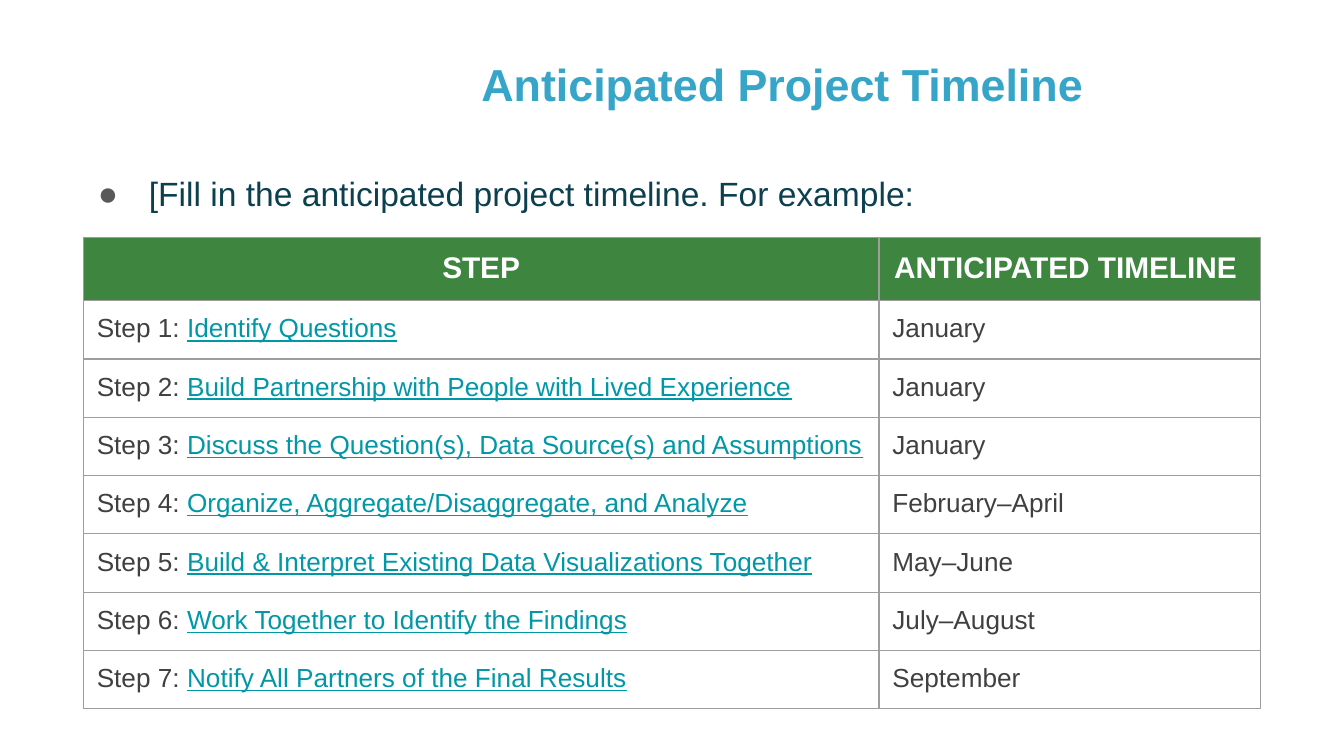
from pptx import Presentation
from pptx.dml.color import RGBColor as RGB
from pptx.enum.text import MSO_ANCHOR as Anchor, PP_ALIGN as Align
from pptx.oxml import parse_xml
from pptx.util import Inches, Pt

NS = 'xmlns:a="http://schemas.openxmlformats.org/drawingml/2006/main"'
COLORS = {"title": "36A5C8", "body": "0C404F", "bullet": "595959",
          "head": "3E863F", "white": "FFFFFF", "text": "404040",
          "link": "0097A7", "border": "9E9E9E"}
STEPS = [
    ("Identify Questions", "January"),
    ("Build Partnership with People with Lived Experience", "January"),
    ("Discuss the Question(s), Data Source(s) and Assumptions", "January"),
    ("Organize, Aggregate/Disaggregate, and Analyze", "February–April"),
    ("Build & Interpret Existing Data Visualizations Together", "May–June"),
    ("Work Together to Identify the Findings", "July–August"),
    ("Notify All Partners of the Final Results", "September"),
]


def style(par, size, color, bold=False):
    # Runs carry the font too, so that row heights follow Arial
    for font in [par.font] + [run.font for run in par.runs]:
        font.name, font.size, font.bold = "Arial", Pt(size), bold
        font.color.rgb = RGB.from_string(COLORS[color])


def inset(item):
    item.margin_left = item.margin_right = Inches(0.1)
    item.margin_top = item.margin_bottom = Inches(0.1)
    item.vertical_anchor = Anchor.TOP


# A 16:9 page
prs = Presentation()
prs.slide_width = Inches(10)
prs.slide_height = prs.slide_width * 9 // 16
slide = prs.slides.add_slide(prs.slide_layouts[5])

# Title
title = slide.shapes.title
title.left, title.top = Inches(2.16), Inches(0.32)
title.width, title.height = Inches(7.32), Inches(0.56)
frame = title.text_frame
inset(frame)
frame.text = "Anticipated Project Timeline"
frame.paragraphs[0].alignment = Align.CENTER
style(frame.paragraphs[0], 24, "title", True)

# Bullet line
box = slide.shapes.add_textbox(Inches(0.51), Inches(1.16), Inches(8.97), Inches(4.04))
frame = box.text_frame
frame.word_wrap = True
inset(frame)
par = frame.paragraphs[0]
par.text = "[Fill in the anticipated project timeline. For example:"
par.line_spacing, par.space_after = 1.1, Pt(6)
style(par, 18, "body")
props = par._p.get_or_add_pPr()
props.set("marL", str(Inches(0.5)))
props.set("indent", str(Inches(-0.38)))
mark = props.find("{*}defRPr")
for xml in (f'<a:buClr {NS}><a:srgbClr val="{COLORS["bullet"]}"/></a:buClr>',
            f'<a:buFont {NS} typeface="Arial"/>',
            f'<a:buChar {NS} char="●"/>'):
    mark.addprevious(parse_xml(xml))

# Table text
rows = len(STEPS) + 1
table = slide.shapes.add_table(rows, 2, Inches(0.62), Inches(1.77),
                               Inches(8.76), Inches(0.41 * rows)).table
table.first_row = table.horz_banding = False
table.columns[0].width, table.columns[1].width = Inches(5.92), Inches(2.84)
for col, text in enumerate(("STEP", "ANTICIPATED TIMELINE ")):
    par = table.cell(0, col).text_frame.paragraphs[0]
    par.text = text
    par.alignment = Align.CENTER
    style(par, 16, "white", True)
for row, (step, when) in enumerate(STEPS, 1):
    left, right = (table.cell(row, col).text_frame.paragraphs[0] for col in (0, 1))
    left.text, right.text = f"Step {row}: ", when
    link = left.add_run()
    link.text = step
    style(left, 14, "text")
    style(right, 14, "text")
    link.font.underline = True
    link.font.color.rgb = RGB.from_string(COLORS["link"])

# Cell borders and fills
for index, cell in enumerate(table.iter_cells()):
    inset(cell)
    props = cell._tc.get_or_add_tcPr()
    for side in "LRTB":
        props.append(parse_xml(
            f'<a:ln{side} {NS} w="{Pt(0.75)}"><a:solidFill>'
            f'<a:srgbClr val="{COLORS["border"]}"/></a:solidFill></a:ln{side}>'))
    if index < 2:
        cell.fill.solid()
        cell.fill.fore_color.rgb = RGB.from_string(COLORS["head"])
    else:
        cell.fill.background()

prs.save("out.pptx")
